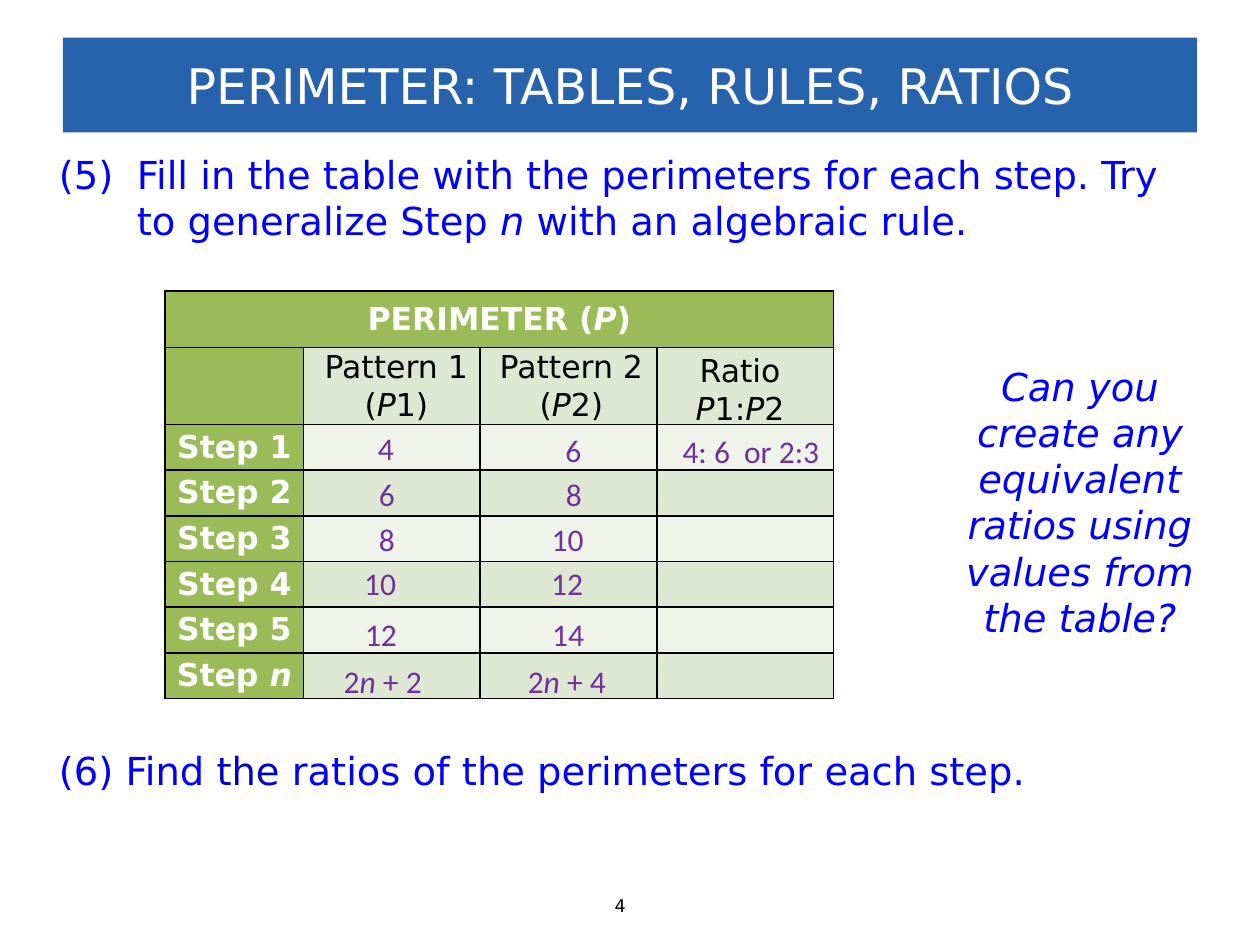
from lxml.etree import SubElement
from pptx import Presentation
from pptx.dml.color import RGBColor
from pptx.enum.shapes import MSO_SHAPE
from pptx.enum.text import MSO_ANCHOR, PP_ALIGN
from pptx.oxml import parse_xml
from pptx.oxml.ns import nsdecls, qn
from pptx.util import Cm, Pt

BLACK = RGBColor(0x00, 0x00, 0x00)
WHITE = RGBColor(0xFF, 0xFF, 0xFF)
TITLE_BLUE = RGBColor(0x27, 0x62, 0xAD)
TEXT_BLUE = RGBColor(0x00, 0x00, 0xFF)
DARK_BLUE = RGBColor(0x00, 0x00, 0xCC)
PURPLE = RGBColor(0x70, 0x30, 0xA0)
GREEN = RGBColor(0x9B, 0xBB, 0x59)
BANDS = RGBColor(0xDE, 0xE7, 0xD1), RGBColor(0xEF, 0xF3, 0xEA)


class SlideBuilder:
    body_font = "DejaVu Sans"
    answer_font = "Calibri"

    def __init__(self, slide):
        self.slide = slide

    def fill_paragraph(self, paragraph, text, size, color, font=None, bold=None,
                       italic=None, align=None, tab=None, hanging=None):
        """Fill a paragraph; parts between asterisks are set in italics."""
        if align is not None:
            paragraph.alignment = align
        properties = paragraph._p.get_or_add_pPr()
        if hanging:
            properties.set("marL", str(Cm(hanging)))
            properties.set("indent", str(-Cm(hanging)))
        if tab:
            tabs = SubElement(properties, qn("a:tabLst"))
            SubElement(tabs, qn("a:tab"), pos=str(Cm(tab)), algn="l")
        paragraph.font.name = font or self.body_font
        paragraph.font.size = Pt(size)
        paragraph.font.color.rgb = color
        paragraph.font.bold = bold
        paragraph.font.italic = italic
        for index, part in enumerate(text.split("*")):
            if part:
                run = paragraph.add_run()
                run.text = part
                if index % 2:
                    run.font.italic = True

    def text(self, left, top, width, height, lines, size=18, color=BLACK,
             wrap=True, **style):
        box = self.slide.shapes.add_textbox(Cm(left), Cm(top), Cm(width), Cm(height))
        frame = box.text_frame
        frame.word_wrap = wrap
        for index, line in enumerate(lines):
            paragraph = frame.add_paragraph() if index else frame.paragraphs[0]
            self.fill_paragraph(paragraph, line, size, color, **style)
        return frame.paragraphs[0]

    def answer(self, left, top, width, text, tab=None):
        self.text(left, top, width, 1.02, [text], color=PURPLE,
                  font=self.answer_font, tab=tab)

    def column_heading(self, left, top, width, lines):
        self.text(left, top, width, 1.8, lines, align=PP_ALIGN.CENTER)

    def title(self, text):
        bar = self.slide.shapes.add_shape(
            MSO_SHAPE.RECTANGLE, Cm(1.27), Cm(0.76), Cm(22.86), Cm(1.91))
        bar.shadow.inherit = False
        bar.fill.solid()
        bar.fill.fore_color.rgb = TITLE_BLUE
        bar.line.fill.background()
        bar.text_frame.vertical_anchor = MSO_ANCHOR.MIDDLE
        self.fill_paragraph(bar.text_frame.paragraphs[0], text, 28, WHITE,
                            align=PP_ALIGN.CENTER)

    def cell(self, cell, fill, text=None):
        cell.margin_left = cell.margin_right = Cm(0.18)
        cell.margin_top = cell.margin_bottom = 0
        cell.vertical_anchor = MSO_ANCHOR.MIDDLE
        cell.fill.solid()
        cell.fill.fore_color.rgb = fill
        properties = cell._tc.get_or_add_tcPr()
        for index, side in enumerate(("lnL", "lnR", "lnT", "lnB")):
            properties.insert(index, parse_xml(
                f'<a:{side} {nsdecls("a")} w="{Pt(1)}"><a:solidFill>'
                f'<a:srgbClr val="{BLACK}"/></a:solidFill></a:{side}>'))
        if text:
            self.fill_paragraph(cell.text_frame.paragraphs[0], text, 18, WHITE,
                                bold=True, align=PP_ALIGN.CENTER)

    def table(self, left, top, widths, heights, labels):
        """Add a table with a merged heading row and a labelled first column."""
        frame = self.slide.shapes.add_table(
            len(heights), len(widths), Cm(left), Cm(top),
            Cm(sum(widths)), Cm(sum(heights)))
        table = frame.table
        table.first_row = table.horz_banding = False
        for column, width in zip(table.columns, widths):
            column.width = Cm(width)
        for row, height in zip(table.rows, heights):
            row.height = Cm(height)
        table.cell(0, 0).merge(table.cell(0, len(widths) - 1))
        for row_index, label in enumerate(labels):
            for column_index in range(len(widths)):
                is_label = column_index == 0
                is_green = is_label or row_index == 0
                self.cell(table.cell(row_index, column_index),
                          GREEN if is_green else BANDS[(row_index + 1) % 2],
                          label if is_label else None)


def main():
    presentation = Presentation()
    presentation.slide_width, presentation.slide_height = Cm(25.4), Cm(19.05)
    slide = presentation.slides.add_slide(presentation.slide_layouts[6])
    builder = SlideBuilder(slide)

    builder.text(12.14, 17.91, 1.12, 0.69, ["4"], size=10, wrap=False)
    builder.title("PERIMETER: TABLES, RULES, RATIOS")
    builder.text(0.94, 2.92, 22.86, 2.21,
                 ["(5)\tFill in the table with the perimeters for each step. "
                  "Try to generalize Step *n *with an algebraic rule."],
                 size=22, color=TEXT_BLUE, hanging=1.57)

    step_labels = [f"Step {step}" for step in (1, 2, 3, 4, 5, "*n*")]
    builder.table(3.33, 5.87, [2.79] + [3.56] * 3, [1.14, 1.55] + [0.92] * 6,
                  ["PERIMETER (*P*)", None] + step_labels)
    builder.column_heading(6.2, 6.88, 3.58, ["Pattern 1", "(*P*1)"])
    builder.column_heading(9.73, 6.88, 3.58, ["Pattern 2", "(*P*2)"])
    builder.column_heading(13.23, 6.96, 3.38, ["Ratio", "*P*1:*P*2"])

    builder.answer(7.37, 8.53, 0.97, "4")
    builder.answer(11.15, 8.56, 0.97, "6")
    builder.answer(13.51, 8.59, 4.14, "4: 6  or 2:3")
    for left, top, width, tab, text in (
            (7.39, 9.45, 5.66, 3.77, "6\t8"),
            (7.39, 10.36, 5.66, 3.48, "8\t10"),
            (7.09, 11.25, 5.66, 3.77, "10\t12"),
            (7.11, 12.27, 5.66, 3.77, "12\t14"),
            (6.68, 13.23, 6.35, 3.71, "2*n* + 2\t2*n *+ 4")):
        builder.answer(left, top, width, text, tab)

    ratio_task = builder.text(0.94, 14.94, 20.37, 1.3, ["(6) Find "], size=22,
                              color=TEXT_BLUE, hanging=1.57)
    emphasis = ratio_task.add_run()
    emphasis.text = "the"
    emphasis.font.color.rgb = DARK_BLUE
    ratio_task.add_run().text = " ratios of the perimeters for each step."

    builder.text(18.9, 7.19, 5.74, 6.45,
                 ["Can you create any equivalent ratios using values from the table?"],
                 size=22, color=TEXT_BLUE, italic=True, align=PP_ALIGN.CENTER)
    presentation.save("out.pptx")


if __name__ == "__main__":
    main()
